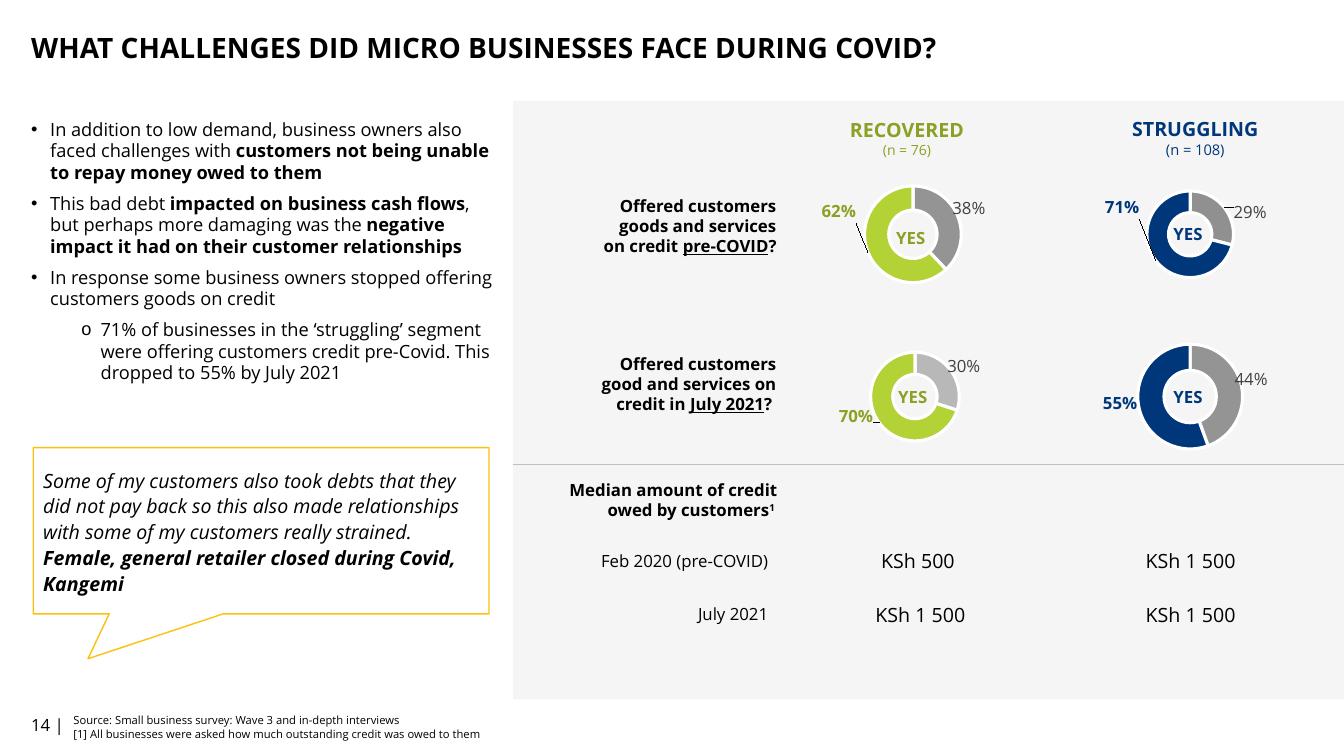
"""Build the slide on challenges micro businesses faced during Covid."""
from math import cos, pi, sin

from lxml import etree
from pptx import Presentation
from pptx.chart.data import CategoryChartData
from pptx.dml.color import RGBColor
from pptx.enum.chart import XL_CHART_TYPE
from pptx.enum.shapes import MSO_CONNECTOR, MSO_SHAPE
from pptx.enum.text import MSO_ANCHOR, PP_ALIGN
from pptx.oxml.ns import qn
from pptx.util import Inches, Pt

LEFT, CENTER, RIGHT = PP_ALIGN.LEFT, PP_ALIGN.CENTER, PP_ALIGN.RIGHT
TOP, MIDDLE = MSO_ANCHOR.TOP, MSO_ANCHOR.MIDDLE
DOUGHNUT = XL_CHART_TYPE.DOUGHNUT
FONT, BULLET_FONT = "Open Sans", "Arial"
BLACK, WHITE, PANEL, RULE, AMBER = "000000", "FFFFFF", "F2F2F2", "C0C0C0", "FEC00F"
GREEN, LIME, BLUE, LABEL_GREY = "89A124", "B3D235", "00377B", "404040"
NO_STYLE_TABLE = "{2D5ABB26-0587-4C30-8999-92F81FD0307C}"


def write_text(frame, paragraphs, size=12, color=BLACK, bold=False, italic=False,
               align=LEFT, anchor=TOP, spacing=None, after=0, margin=0, bullets=""):
    """Fill a frame with paragraphs, each a list of (text, changed format) runs."""
    frame.word_wrap = True
    frame.vertical_anchor = anchor
    for index, runs in enumerate(paragraphs):
        paragraph = frame.paragraphs[0] if index == 0 else frame.add_paragraph()
        paragraph.alignment = align
        paragraph.space_after = Pt(after)
        if spacing:
            paragraph.line_spacing = spacing
        properties = paragraph._p.get_or_add_pPr()
        if bullets:
            paragraph.level = 1 if bullets[index] == "o" else 0
            properties.set("marL", str(Inches(0.19 + 0.5 * paragraph.level)))
            properties.set("indent", str(Inches(-0.19)))
            etree.SubElement(properties, qn("a:buFont")).set("typeface", BULLET_FONT)
            etree.SubElement(properties, qn("a:buChar")).set("char", bullets[index])
        elif margin:
            properties.set("marL", str(Inches(margin)))
        for text, changes in runs:
            run = paragraph.add_run()
            run.text = text
            run.font.name = FONT
            run.font.size = Pt(changes.get("size", size))
            run.font.bold = changes.get("bold", bold)
            run.font.italic = italic
            run.font.underline = changes.get("underline", False)
            run.font.color.rgb = RGBColor.from_string(color)
            if "baseline" in changes:
                run.font._element.set("baseline", changes["baseline"])


def add_text(box, paragraphs, **text_format):
    """Add a text box at the given left, top, width and height in inches."""
    text_box = slide.shapes.add_textbox(*map(Inches, box))
    write_text(text_box.text_frame, paragraphs, **text_format)


presentation = Presentation()
presentation.slide_width = Inches(13.33)
presentation.slide_height = Inches(7.5)
slide = presentation.slides.add_slide(presentation.slide_layouts[5])

panel = slide.shapes.add_shape(MSO_SHAPE.RECTANGLE, Inches(5.09), Inches(1), Inches(8.24), Inches(5.94))
panel.shadow.inherit = False
panel.fill.solid()
panel.fill.fore_color.rgb = RGBColor.from_string(PANEL)
panel_color = panel._element.spPr.find(".//" + qn("a:srgbClr"))
etree.SubElement(panel_color, qn("a:alpha")).set("val", "70000")
panel.line.fill.background()

title = slide.shapes.title
title.left, title.top, title.width, title.height = map(Inches, (0.21, -0.02, 11.78, 1.02))
write_text(title.text_frame, [[("WHAT CHALLENGES DID MICRO BUSINESSES FACE DURING COVID?", {})]],
           size=20, bold=True, anchor=MIDDLE, spacing=0.9)

add_text((0.21, 6.99, 0.69, 0.4), [[("14 |", {})]], anchor=MIDDLE)
add_text((0.63, 7.03, 11.23, 0.37), [
    [("Source: Small business survey: Wave 3 and in-depth interviews", {})],
    [("[1] All businesses were asked how much outstanding credit was owed to them", {})],
], size=8)

strong = {"bold": True}
add_text((0.21, 1.12, 4.77, 3.05), [
    [("In addition to low demand, business owners also faced challenges with ", {}),
     ("customers not being unable to repay money owed to them", strong)],
    [("This bad debt ", {}), ("impacted on business cash flows", strong),
     (", but perhaps more damaging was the ", {}),
     ("negative impact it had on their customer relationships", strong)],
    [("In response some business owners stopped offering customers goods on credit", {})],
    [("71% of businesses in the ‘struggling’ segment were offering customers credit "
      "pre-Covid. This dropped to 55% by July 2021", {})],
], size=13, after=6, bullets="•••o")

callout = slide.shapes.add_shape(MSO_SHAPE.RECTANGULAR_CALLOUT, Inches(0.33), Inches(4.44),
                                 Inches(4.52), Inches(1.65))
callout.shadow.inherit = False
callout.adjustments[0], callout.adjustments[1] = -0.38, 0.77
callout.fill.solid()
callout.fill.fore_color.rgb = RGBColor.from_string(WHITE)
callout.line.color.rgb = RGBColor.from_string(AMBER)
callout.line.width = Pt(1)
write_text(callout.text_frame, [[
    ("Some of my customers also took debts that they did not pay back so this also made "
     "relationships with some of my customers really strained. ", {}),
    ("Female, general retailer closed during Covid, Kangemi", strong),
]], size=14, italic=True, anchor=MIDDLE, spacing=1.1, after=6)

for left, top, segment, count, color, count_size in (
        (8.19, 1.12, "RECOVERED", "(n = 76)", GREEN, 10),
        (11.05, 1.11, "STRUGGLING", "(n = 108)", BLUE, 10.5)):
    add_text((left, top, 1.61, 0.5),
             [[(segment, strong)], [(count, {"size": count_size})]],
             size=14, color=color, align=CENTER)

underlined = {"underline": True}
for left, top, width, question in (
        (5.46, 1.89, 2.34, [("Offered customers goods and services on credit ", {}),
                            ("pre-COVID", underlined), ("? ", {})]),
        (5.46, 3.46, 2.34, [("Offered customers good and services on credit in ", {}),
                            ("July 2021", underlined), ("? ", {})]),
        (4.98, 4.71, 2.83, [("Median amount of credit owed by customers", {}),
                            ("1 ", {"baseline": "30000"})])):
    add_text((left, top, width, 0.71), [question], bold=True, align=RIGHT, margin=0.39)

# chart left and top, YES top, diameter, (no, yes) shares, (no, yes) colours, label centres
chart_width, chart_height = 2.95, 1.35
for left, top, yes_top, diameter, shares, colors, text_color, centers in (
        (7.58, 1.65, 2.21, 0.96, (0.38, 0.62), ("949494", LIME), GREEN, ((9.61, 2.07), (8.32, 2.1))),
        (10.33, 1.65, 2.17, 0.86, (0.29, 0.71), ("909090", BLUE), BLUE, ((12.4, 2.11), (11.13, 2.06))),
        (7.6, 3.26, 3.79, 0.88, (0.3, 0.7), ("B8B8B8", LIME), GREEN, ((9.56, 3.63), (8.49, 4.13))),
        (10.33, 3.26, 3.79, 1.04, (0.44, 0.55), ("949494", BLUE), BLUE, ((12.41, 3.76), (11.11, 4)))):
    chart_data = CategoryChartData(number_format="0%")
    chart_data.categories = ["1", "2"]
    chart_data.add_series("Series 1", shares)
    chart = slide.shapes.add_chart(DOUGHNUT, Inches(left), Inches(top), Inches(chart_width),
                                   Inches(chart_height), chart_data).chart
    chart.has_legend = chart.has_title = False
    chart.font.name, chart.font.size = FONT, Pt(10)
    plot = chart.plots[0]
    plot.vary_by_categories = True
    chart.element.find(".//" + qn("c:holeSize")).set("val", "59")
    series = plot.series[0]
    labels = series.data_labels
    labels.show_value = True
    labels.number_format, labels.number_format_is_linked = "0%", False
    start = 0
    for index, share in enumerate(shares):
        point = series.points[index]
        point.format.fill.solid()
        point.format.fill.fore_color.rgb = RGBColor.from_string(colors[index])
        point.format.line.color.rgb = RGBColor.from_string(WHITE)
        point.format.line.width = Pt(2.25)
        font = point.data_label.font
        font.name, font.size, font.bold = FONT, Pt(12), index == 1
        font.color.rgb = RGBColor.from_string(text_color if index else LABEL_GREY)
        angle = 2 * pi * (start + share / 2) / sum(shares)
        start += share
        ring_x = left + chart_width / 2 + 0.375 * diameter * sin(angle)
        ring_y = top + chart_height / 2 - 0.375 * diameter * cos(angle)
        layout = etree.Element(qn("c:layout"))
        manual = etree.SubElement(layout, qn("c:manualLayout"))
        for name, value in (("x", (centers[index][0] - ring_x) / chart_width),
                            ("y", (centers[index][1] - ring_y) / chart_height)):
            etree.SubElement(manual, qn("c:" + name)).set("val", f"{value:.4f}")
        label_index = chart.element.findall(".//" + qn("c:dLbl") + "/" + qn("c:idx"))[index]
        label_index.addnext(layout)
    plot_area = chart.element.find(".//" + qn("c:plotArea"))
    for old_layout in plot_area.findall(qn("c:layout")):
        plot_area.remove(old_layout)
    layout = etree.Element(qn("c:layout"))
    plot_area.insert(0, layout)
    manual = etree.SubElement(layout, qn("c:manualLayout"))
    across, down = diameter / chart_width, diameter / chart_height
    for name, value in (("layoutTarget", "inner"), ("xMode", "edge"), ("yMode", "edge"),
                        ("x", (1 - across) / 2), ("y", (1 - down) / 2), ("w", across), ("h", down)):
        etree.SubElement(manual, qn("c:" + name)).set("val", str(value))
    add_text((left + 1.21, yes_top, 0.58, 0.3), [[("YES", {})]], color=text_color, bold=True, after=6)

table_shape = slide.shapes.add_table(2, 3, Inches(5.46), Inches(5.3), Inches(7.62), Inches(1.06))
table = table_shape.table
table.first_row = table.horz_banding = False
table._tbl.tblPr.find(qn("a:tableStyleId")).text = NO_STYLE_TABLE
for column, width in zip(table.columns, (2.26, 2.82, 2.54)):
    column.width = Inches(width)
for row, texts in enumerate((("Feb 2020 (pre-COVID)", "KSh 500 ", "KSh 1 500"),
                             ("July 2021", "KSh 1 500", "KSh 1 500"))):
    for column, text in enumerate(texts):
        cell = table.cell(row, column)
        cell.fill.background()
        write_text(cell.text_frame, [[(text, {})]], size=14 if column else 12,
                   align=CENTER if column else RIGHT)
        cell.vertical_anchor = MIDDLE

divider = slide.shapes.add_connector(MSO_CONNECTOR.STRAIGHT, Inches(5.09), Inches(4.61),
                                     Inches(13.33), Inches(4.61))
divider.line.color.rgb = RGBColor.from_string(RULE)
divider.line.width = Pt(0.5)
etree.SubElement(divider._element.spPr, qn("a:effectLst"))

presentation.save("out.pptx")
